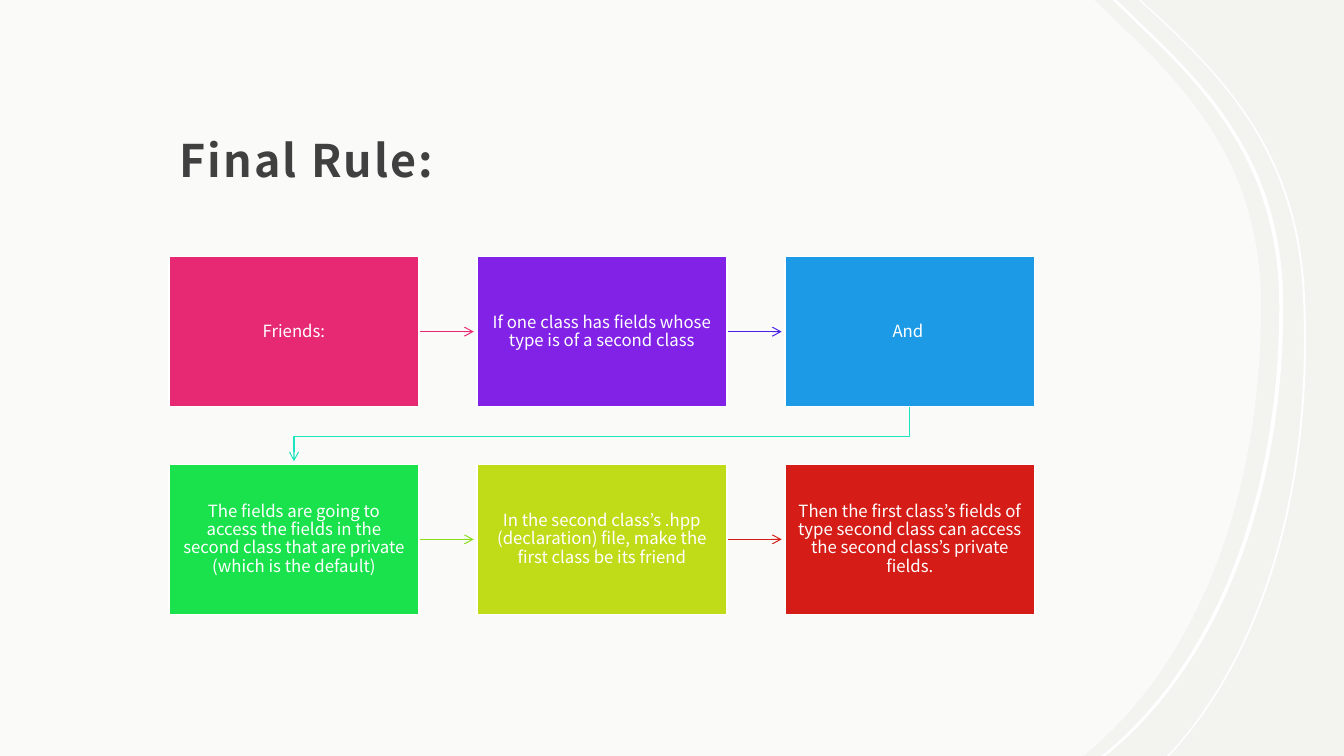
from dataclasses import dataclass

from lxml import etree
from pptx import Presentation
from pptx import util as u
from pptx.dml.color import RGBColor
from pptx.enum import shapes, text
from pptx.oxml import ns


@dataclass(frozen=True)
class Theme:
    font: str = "Noto Sans CJK JP"
    background: str = "F3F3F0"
    white: str = "FFFFFF"
    title: str = "404040"
    title_size: float = 32
    body_size: float = 12
    arrow_width: float = 0.75
    border_width: float = 1


THEME = Theme()
WIDTH, HEIGHT = 33.87, 19.05

# Edges in cm, top to bottom: two start points, two Bezier curves, an end point
PANEL_EDGE = [(27.58, 0), (28.5, 0.89),
              (30.33, 2.64), (31.78, 4.55), (31.78, 7.72),
              (31.78, 12.5), (30.18, 16.69), (27.36, 19), (27.28, HEIGHT)]
OUTER_EDGE = [(28.7, 0), (29.36, 0.61),
              (31.22, 2.36), (32.72, 4.27), (32.84, 7.54),
              (33.05, 12.19), (31.85, 16.38), (29.49, 18.97), (29.41, HEIGHT)]

# Text, box colour, colour of the arrow leaving the box
STEPS = [
    ("Friends:", "E72974", "E72974"),
    ("If one class has fields whose type is of a second class",
     "8222E6", "4A21E6"),
    ("And ", "1C9AE6", "19E5BF"),
    ("The fields are going to access the fields in the second class "
     "that are private (which is the default)", "19E24D", "8ADD18"),
    ("In the second class’s .hpp (declaration) file, make the first class "
     "be its friend", "C0DB18", "D51C17"),
    ("Then the first class’s fields of type second class can access "
     "the second class’s private fields.", "D51C17", None),
]


def rgb(code):
    return RGBColor.from_string(code)


def add_child(parent, tag, **attrs):
    return etree.SubElement(parent, ns.qn(tag), **attrs)


def segments(edge):
    """Split an edge into lines (one point) and curves (three points)."""
    return [edge[:1], edge[1:2], edge[2:5], edge[5:8], edge[8:]]


def shift(points, dx):
    return [(x + dx, y) for x, y in points]


def add_outline(s, parts, close=True):
    """Freeform through the last point of each part; three points bend it."""
    nodes = [(u.Cm(x), u.Cm(y)) for x, y in (part[-1] for part in parts)]
    builder = s.shapes.build_freeform(*nodes[0])
    builder.add_line_segments(nodes[1:], close=close)
    sp = builder.convert_to_shape()
    sp.shadow.inherit = False
    lines = list(sp._element.iter(ns.qn("a:lnTo")))
    for line, part in zip(lines, parts[1:]):
        if len(part) == 3:
            curve = etree.Element(ns.qn("a:cubicBezTo"))
            for x, y in part:
                add_child(curve, "a:pt", x=str(u.Cm(x) - sp.left),
                          y=str(u.Cm(y) - sp.top))
            line.getparent().replace(line, curve)
    return sp


def add_area(s, parts, alpha=None):
    sp = add_outline(s, parts)
    sp.fill.solid()
    sp.fill.fore_color.rgb = rgb(THEME.white)
    sp.line.fill.background()
    if alpha is not None:
        color = sp._element.spPr.find(".//" + ns.qn("a:srgbClr"))
        add_child(color, "a:alpha", val=str(alpha * 1000))


def style_arrow(sp, color):
    sp.fill.background()
    sp.line.color.rgb = rgb(color)
    sp.line.width = u.Pt(THEME.arrow_width)
    add_child(sp._element.spPr.find(ns.qn("a:ln")), "a:tailEnd", type="arrow")


def fill_text(sp, content, size, color, margins, anchor, spacing):
    tf = sp.text_frame
    tf.word_wrap = True
    tf.vertical_anchor = anchor
    tf.margin_left = tf.margin_right = u.Cm(margins[0])
    tf.margin_top = tf.margin_bottom = u.Cm(margins[1])
    tf.text = content
    p = tf.paragraphs[0]
    p.line_spacing = spacing
    r = p.runs[0]
    r.font.name = THEME.font
    r.font.size = u.Pt(size)
    r.font.color.rgb = rgb(color)
    add_child(r._r.get_or_add_rPr(), "a:ea", typeface=THEME.font)
    return p


def add_backdrop(s):
    """Pale panel with a curved right edge, and two white ribbons beside it."""
    s.background.fill.solid()
    s.background.fill.fore_color.rgb = rgb(THEME.background)
    add_area(s, [[(0, 0)]] + segments(PANEL_EDGE) + [[(0, HEIGHT)]], alpha=60)
    for edge, thickness in ((OUTER_EDGE, 0.05), (shift(PANEL_EDGE, 0.46), 0.1)):
        back = shift(edge, thickness)[::-1]
        add_area(s, segments(edge) + segments(back))


def add_title(s, x, y, w, h):
    sp = s.shapes.add_textbox(u.Cm(x), u.Cm(y), u.Cm(w), u.Cm(h))
    p = fill_text(sp, "Final Rule:", THEME.title_size, THEME.title,
                  (0.3, 0.25), text.MSO_ANCHOR.BOTTOM, 1.3)
    r = p.runs[0]
    r.font.bold = True
    r._r.get_or_add_rPr().set("spc", "150")


def add_step(s, x, y, w, h, content, color):
    sp = s.shapes.add_shape(shapes.MSO_SHAPE.RECTANGLE,
                            u.Cm(x), u.Cm(y), u.Cm(w), u.Cm(h))
    sp.shadow.inherit = False
    sp.fill.solid()
    sp.fill.fore_color.rgb = rgb(color)
    sp.line.color.rgb = rgb(THEME.white)
    sp.line.width = u.Pt(THEME.border_width)
    p = fill_text(sp, content, THEME.body_size, THEME.white,
                  (0.3, 0.33), text.MSO_ANCHOR.MIDDLE, 0.9)
    p.alignment = text.PP_ALIGN.CENTER


def add_straight_arrow(s, x, y, length, color, height=0.25):
    """Arrow along the middle of a box of the given height."""
    sp = add_outline(s, [[(x, y)], [(x + length, y)]], close=False)
    middle = u.Cm(height / 2)
    sp.top, sp.height = sp.top - middle, 2 * middle
    outline = sp._element.spPr.find(".//" + ns.qn("a:path"))
    outline.set("h", str(2 * middle))
    for pt in outline.iter(ns.qn("a:pt")):
        pt.set("y", str(middle))
    style_arrow(sp, color)


def add_return_arrow(s, x1, x2, y, gap, length, color):
    """Bent arrow from the end of one row to the start of the next."""
    bend = y + gap / 2
    sp = add_outline(s, [[(x1, y)], [(x1, bend)], [(x2, bend)],
                         [(x2, y + length)]], close=False)
    style_arrow(sp, color)


def add_flow(s, x, y, w, h, columns=3, rows=2, gap=1.46):
    box_w = (w - gap * (columns - 1)) / columns
    box_h = (h - gap * (rows - 1)) / rows
    arrow = gap - 0.1
    for i, (content, color, arrow_color) in enumerate(STEPS):
        row, column = divmod(i, columns)
        left = x + column * (box_w + gap)
        top = y + row * (box_h + gap)
        if arrow_color and column < columns - 1:
            add_straight_arrow(s, left + box_w + 0.02, top + box_h / 2,
                               arrow, arrow_color)
        elif arrow_color:
            add_return_arrow(s, left + box_w / 2, x + box_w / 2,
                             top + box_h + 0.02, gap, arrow, arrow_color)
        add_step(s, left, top, box_w, box_h, content, color)


def main():
    prs = Presentation()
    prs.slide_width, prs.slide_height = u.Cm(WIDTH), u.Cm(HEIGHT)
    s = prs.slides.add_slide(prs.slide_layouts[6])
    add_backdrop(s)
    add_title(s, 4.22, 1.22, 21.72, 3.73)
    add_flow(s, 4.26, 6.47, 21.82, 9.01)
    prs.save("out.pptx")


if __name__ == "__main__":
    main()
